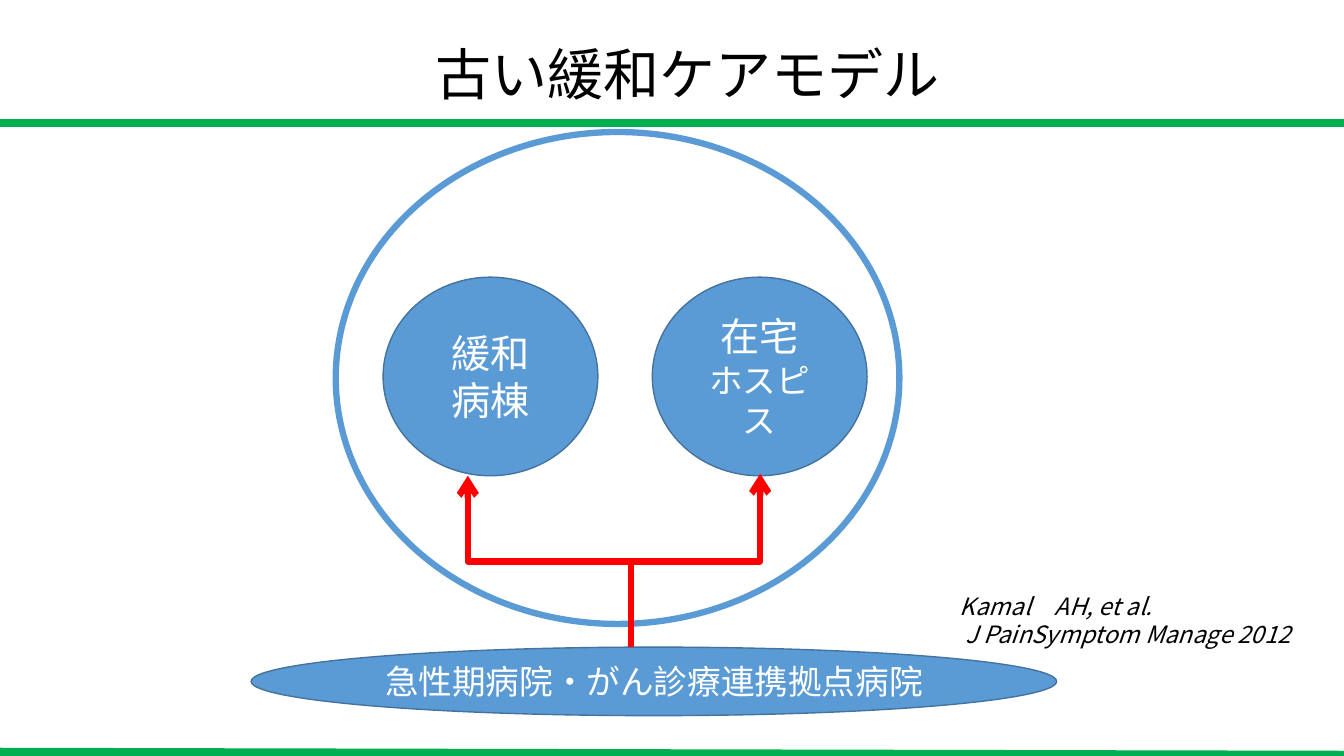
from lxml.etree import SubElement
from pptx import Presentation
from pptx.dml.color import RGBColor
from pptx.enum.shapes import MSO_CONNECTOR as Link, MSO_SHAPE as Preset
from pptx.enum.text import MSO_ANCHOR as Anchor, MSO_AUTO_SIZE as AutoSize, PP_ALIGN as Align
from pptx.oxml.ns import qn
from pptx.util import Inches, Pt

FONT = "Noto Sans CJK JP"
BLUE, EDGE, RED, GREEN = "5B9BD5", "43739E", "FF0000", "00B050"
WHITE, BLACK = "FFFFFF", "000000"

# Text is a list of (line, size); boxes are left, top, width, height in inches.
TITLE = [("古い緩和ケアモデル", 40)]
TITLE_BOX = (1.07, 0.04, 11.5, 1.45)
CITATION = [("Kamal　AH, et al.", 17), (" J PainSymptom Manage 2012", 17)]
CITATION_BOX = (9.42, 5.82, 3.58, 0.67)

CARE_TOP, CARE_WIDTH, CARE_HEIGHT = 2.75, 2.13, 1.97
CARE_PLACES = [
    (3.8, [("緩和", 28), ("病棟", 28)]),
    (6.47, [("在宅", 28), ("ホスピス", 24)]),
]
HOSPITAL = [("急性期病院・がん診療連携拠点病院", 24)]
HOSPITAL_BOX = (2.49, 6.42, 7.99, 0.68)
RING_BOX = (3.33, 1.31, 5.59, 4.88)

# Start and end points in inches.
RULES = [((0, 1.22), (13.33, 1.22)), ((0, 7.46), (13.33, 7.49))]
TO_WARD = ((6.26, 6.42), (4.64, 4.72))
TO_HOME = ((6.23, 5.57), (7.54, 4.7))


def color(value):
    return RGBColor.from_string(value)


def inches(values):
    return [Inches(value) for value in values]


def write(frame, lines, ink, align=Align.CENTER, italic=False, spacing=None):
    frame.text = "\n".join(line for line, size in lines)
    for para, (line, size) in zip(frame.paragraphs, lines):
        para.alignment = align
        para.line_spacing = spacing
        font = para.runs[0].font
        font.size, font.name, font.italic = Pt(size), FONT, italic
        font.color.rgb = color(ink)
        SubElement(para.runs[0]._r.get_or_add_rPr(), qn("a:ea"), typeface=FONT)


def add_ellipse(box, line, width, fill=None, lines=()):
    shape = page.shapes.add_shape(Preset.OVAL, *inches(box))
    shape.shadow.inherit = False
    shape.line.color.rgb, shape.line.width = color(line), Pt(width)
    if fill:
        shape.fill.solid()
        shape.fill.fore_color.rgb = color(fill)
    else:
        shape.fill.background()
    if lines:
        shape.text_frame.vertical_anchor = Anchor.MIDDLE
        write(shape.text_frame, lines, WHITE)


def add_line(kind, start, end, ink, width, arrow=False):
    line = page.shapes.add_connector(kind, *inches(start + end))
    line.line.color.rgb, line.line.width = color(ink), Pt(width)
    if arrow:
        SubElement(line.line._get_or_add_ln(), qn("a:tailEnd"), type="arrow")
    SubElement(line._element.spPr, qn("a:effectLst"))
    return line


def add_upright_elbow(start, end):
    """Elbow that leaves upwards: laid out on its side, then turned 270 degrees."""
    (x1, y1), (x2, y2) = start, end
    middle_x, middle_y = (x1 + x2) / 2, (y1 + y2) / 2
    half_rise, half_run = (y1 - y2) / 2, (x1 - x2) / 2
    elbow = add_line(Link.ELBOW, (middle_x - half_rise, middle_y + half_run),
                     (middle_x + half_rise, middle_y - half_run), RED, 4.5, arrow=True)
    elbow._element.spPr.find(qn("a:xfrm")).set("rot", str(270 * 60000))


def add_corner(start, end):
    """Elbow with a single bend."""
    corner = add_line(Link.ELBOW, start, end, RED, 4.5, arrow=True)
    corner._element.spPr.find(qn("a:prstGeom")).set("prst", "bentConnector2")


deck = Presentation()
deck.slide_width, deck.slide_height = Inches(13.33), Inches(7.5)
page = deck.slides.add_slide(deck.slide_layouts[6])

for left, lines in CARE_PLACES:
    add_ellipse((left, CARE_TOP, CARE_WIDTH, CARE_HEIGHT), EDGE, 1, BLUE, lines)
add_ellipse(HOSPITAL_BOX, EDGE, 1, BLUE, HOSPITAL)
add_ellipse(RING_BOX, BLUE, 4.5)

add_upright_elbow(*TO_WARD)
add_corner(*TO_HOME)

title = page.shapes.add_textbox(*inches(TITLE_BOX)).text_frame
title.word_wrap = True
title.vertical_anchor = Anchor.MIDDLE
write(title, TITLE, BLACK, spacing=0.9)

for start, end in RULES:
    add_line(Link.STRAIGHT, start, end, GREEN, 6)

citation = page.shapes.add_textbox(*inches(CITATION_BOX)).text_frame
citation.word_wrap = False
citation.auto_size = AutoSize.SHAPE_TO_FIT_TEXT
write(citation, CITATION, BLACK, align=Align.LEFT, italic=True)

deck.save("out.pptx")
